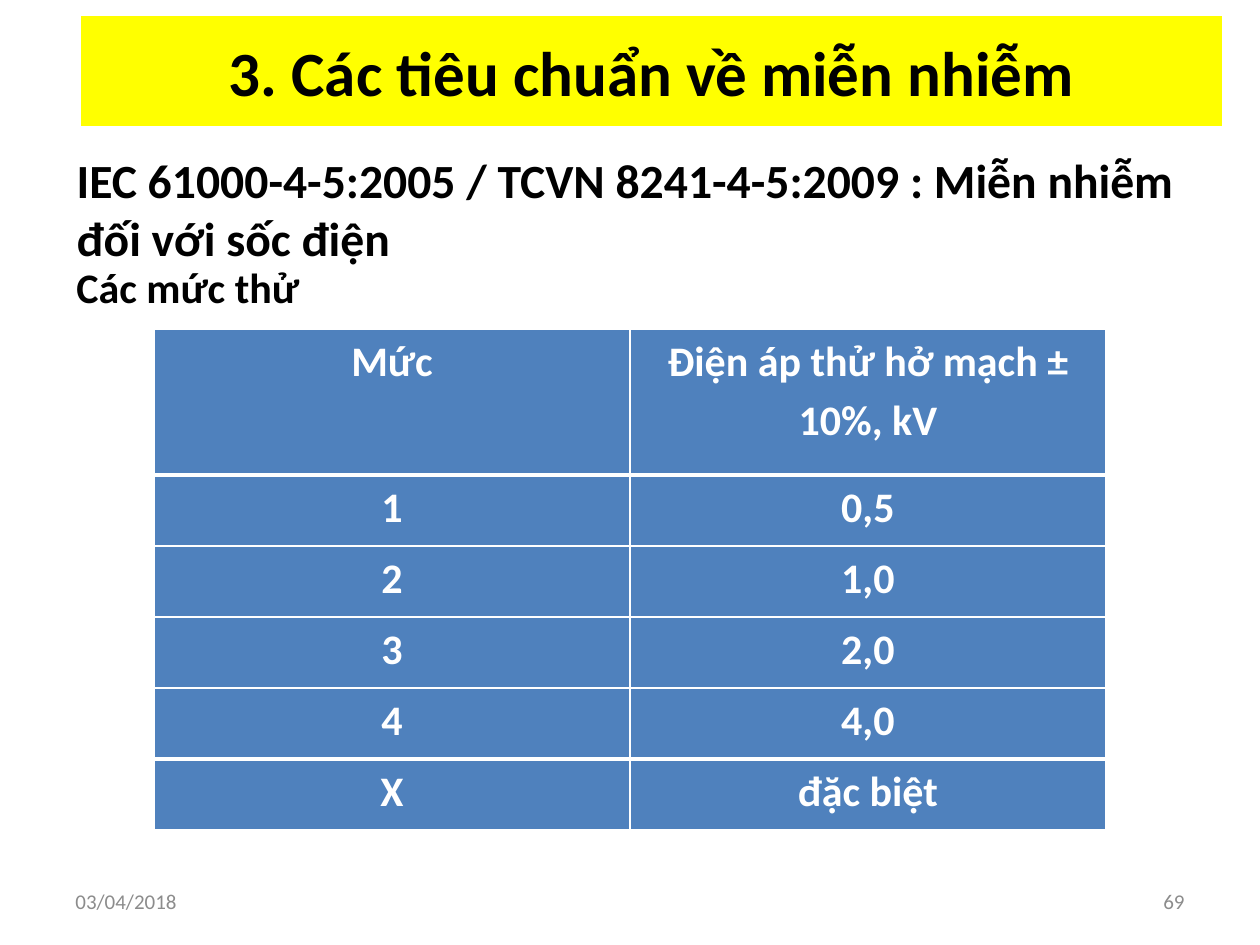
from lxml import etree
from pptx import Presentation
from pptx import util as u
from pptx.dml.color import RGBColor
from pptx.enum import text
from pptx.oxml import ns

PX = u.Inches(1) / 126
BLACK = RGBColor(0x00, 0x00, 0x00)
WHITE = RGBColor(0xFF, 0xFF, 0xFF)
YELLOW = RGBColor(0xFF, 0xFF, 0x00)
BLUE = RGBColor(0x4F, 0x81, 0xBD)
GREY = RGBColor(0x8C, 0x8C, 0x8C)
LEFT, CENTER, RIGHT = text.PP_ALIGN.LEFT, text.PP_ALIGN.CENTER, text.PP_ALIGN.RIGHT
TOP, MIDDLE = text.MSO_ANCHOR.TOP, text.MSO_ANCHOR.MIDDLE

LEVELS = [
    ("Mức", "Điện áp thử hở mạch ± 10%, kV"),
    ("1", "0,5"),
    ("2", "1,0"),
    ("3", "2,0"),
    ("4", "4,0"),
    ("X", "đặc biệt"),
]


def px(length):
    """Turn px into EMU."""
    return u.Emu(round(length * PX))


def apply(target, values):
    """Set each named attribute on the target."""
    for name, value in values.items():
        setattr(target, name, value)


def write(frame, words, size, color, bold=True, **layout):
    """Write one formatted paragraph into a text frame."""
    para = frame.paragraphs[0]
    apply(para, layout)
    span = para.add_run()
    span.text = words
    apply(span.font, {"name": "Calibri", "size": u.Pt(size), "bold": bold})
    span.font.color.rgb = color
    return para


def place(box, area, anchor):
    """Position a box and fix how its text sits."""
    apply(box, dict(zip(("left", "top", "width", "height"), map(px, area))))
    apply(box.text_frame, {
        "word_wrap": True,
        "auto_size": text.MSO_AUTO_SIZE.NONE,
        "vertical_anchor": anchor,
    })
    return box.text_frame


def add_label(page, area, words, size, color, bold, align, anchor):
    """Add a text box with one paragraph."""
    box = page.shapes.add_textbox(0, 0, 0, 0)
    write(place(box, area, anchor), words, size, color, bold, alignment=align)


def fill_title(page):
    """Fill the title banner."""
    title = page.shapes.title
    title.fill.solid()
    title.fill.fore_color.rgb = YELLOW
    frame = place(title, (81, 16, 1141, 110), MIDDLE)
    write(frame, "3. Các tiêu chuẩn về miễn nhiễm", 36, BLACK, alignment=CENTER)


def fill_body(page):
    """Fill the body with an unbulleted heading."""
    frame = place(page.placeholders[1], (64, 145, 1153, 110), TOP)
    words = "IEC 61000-4-5:2005 / TCVN 8241-4-5:2009 : Miễn nhiễm đối với sốc điện"
    para = write(frame, words, 27.2, BLACK, alignment=LEFT)
    props = para._p.get_or_add_pPr()
    props.set("marL", "0")
    props.set("indent", "0")
    etree.SubElement(props, ns.qn("a:buNone"))


def set_borders(cell, widths):
    """Draw white borders, with widths in points by side."""
    props = cell._tc.get_or_add_tcPr()
    for side, width in widths.items():
        line = etree.SubElement(props, ns.qn(f"a:ln{side}"), w=str(u.Pt(width)))
        solid = etree.SubElement(line, ns.qn("a:solidFill"))
        etree.SubElement(solid, ns.qn("a:srgbClr"), val=str(WHITE))


def add_levels(page):
    """Add the table of test levels."""
    last = len(LEVELS) - 1
    heights = [146] + [71] * last
    area = map(px, (154, 329, 952, sum(heights)))
    table = page.shapes.add_table(len(LEVELS), 2, *area).table
    apply(table, {"first_row": False, "horz_banding": False})
    for i, values in enumerate(LEVELS):
        table.rows[i].height = px(heights[i])
        above = 3 if i in (1, last) else 1
        below = 3 if i in (0, last - 1) else 1
        for j, words in enumerate(values):
            cell = table.cell(i, j)
            apply(cell, {f"margin_{side}": 0 for side in ("left", "top", "right", "bottom")})
            set_borders(cell, {"L": 1, "R": 1, "T": above, "B": below})
            cell.fill.solid()
            cell.fill.fore_color.rgb = BLUE
            write(cell.text_frame, words, 24, WHITE, alignment=CENTER,
                  line_spacing=1.15, space_before=u.Pt(6))


def main():
    """Build and save the slide."""
    deck = Presentation()
    apply(deck, {"slide_width": u.Inches(10), "slide_height": u.Inches(7.5)})
    page = deck.slides.add_slide(deck.slide_layouts[1])
    fill_title(page)
    fill_body(page)
    add_label(page, (64, 255, 1153, 83), "Các mức thử", 24, BLACK, True, LEFT, TOP)
    add_levels(page)
    add_label(page, (63, 876, 294, 50), "03/04/2018", 12, GREY, False, LEFT, MIDDLE)
    add_label(page, (903, 876, 294, 50), "69", 12, GREY, False, RIGHT, MIDDLE)
    deck.save("out.pptx")


if __name__ == "__main__":
    main()
